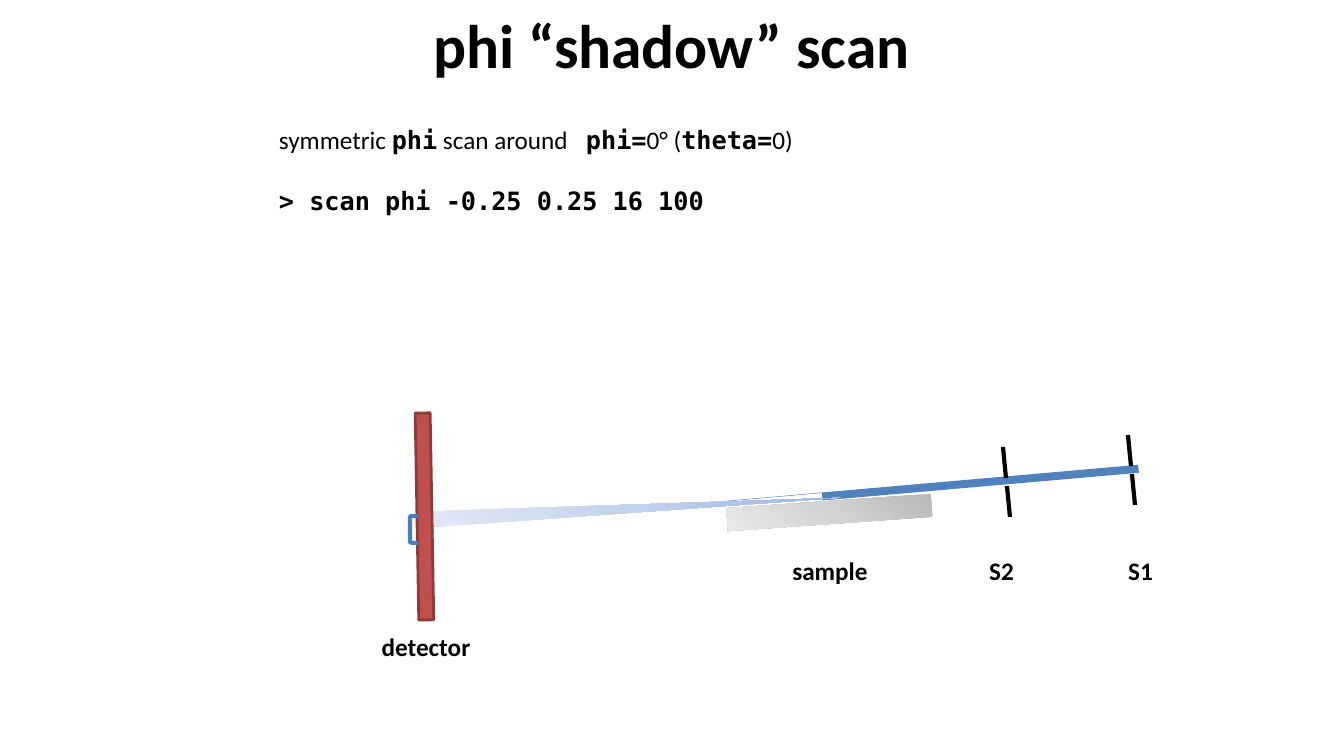
import pptx
import pptx.dml.color
import pptx.enum.shapes
import pptx.enum.text
import pptx.oxml
import pptx.oxml.ns
import pptx.util

SHAPE = pptx.enum.shapes.MSO_SHAPE
ALIGN = pptx.enum.text.PP_ALIGN
ANCHOR = pptx.enum.text.MSO_ANCHOR
FIT = pptx.enum.text.MSO_AUTO_SIZE
NS = pptx.oxml.ns.nsdecls("a")


def px(n):
    return pptx.util.Emu(round(n * 914400 / 100.8))


def rgb(value):
    return pptx.dml.color.RGBColor.from_string(value)


class Slide:
    BLACK = "000000"
    BLUE = "4F81BD"
    BODY = {"name": "Calibri", "size": pptx.util.Pt(18), "bold": False}
    BOLD = {**BODY, "bold": True}
    CODE = {**BOLD, "name": "DejaVu Sans Mono"}
    TITLE = {**BOLD, "size": pptx.util.Pt(44)}

    def __init__(self, prs):
        self.s = prs.slides.add_slide(prs.slide_layouts[6])

    def shape(self, kind, x, y, w, h, fill=None, line=None, rotation=0):
        sp = self.s.shapes.add_shape(kind, px(x), px(y), px(w), px(h))
        sp.shadow.inherit = False
        sp.rotation = rotation
        if fill:
            sp.fill.solid()
            sp.fill.fore_color.rgb = rgb(fill)
        else:
            sp.fill.background()
        if line:
            color, width = line
            sp.line.color.rgb = rgb(color)
            sp.line.width = pptx.util.Pt(width)
        else:
            sp.line.fill.background()
        return sp

    def gradient(self, sp, colors, direction):
        stops = "".join(
            f'<a:gs pos="{i * 50000}"><a:srgbClr val="{c}"/></a:gs>'
            for i, c in enumerate(colors)
        )
        xml = (f'<a:gradFill {NS} rotWithShape="1">'
               f"<a:gsLst>{stops}</a:gsLst>{direction}</a:gradFill>")
        pr = sp._element.spPr
        old = pr.find(pptx.oxml.ns.qn("a:noFill"))
        pr.replace(old, pptx.oxml.parse_xml(xml))

    def line(self, x1, y1, x2, y2):
        cn = self.s.shapes.add_connector(
            pptx.enum.shapes.MSO_CONNECTOR.STRAIGHT,
            px(x1), px(y1), px(x2), px(y2))
        cn.line.color.rgb = rgb(self.BLACK)
        cn.line.width = pptx.util.Pt(3)
        cn._element.spPr.append(pptx.oxml.parse_xml(f"<a:effectLst {NS}/>"))

    def slit(self, x, y):
        for dx, dy in ((0, 0), (4, 39)):
            self.line(x + dx, y + dy, x + dx + 3, y + dy + 31)

    def text(self, x, y, w, h, paragraphs, align=ALIGN.CENTER,
             anchor=ANCHOR.TOP, fit=FIT.SHAPE_TO_FIT_TEXT):
        sp = self.s.shapes.add_textbox(px(x), px(y), px(w), px(h))
        tf = sp.text_frame
        for key, value in {"word_wrap": True, "auto_size": fit,
                           "vertical_anchor": anchor}.items():
            setattr(tf, key, value)
        for i, runs in enumerate(paragraphs):
            p = tf.add_paragraph() if i else tf.paragraphs[0]
            p.alignment = align
            if i:
                p.space_before = pptx.util.Pt(22)
            for content, fmt in runs:
                r = p.add_run()
                r.text = content
                for key, value in fmt.items():
                    setattr(r.font, key, value)
                r.font.color.rgb = rgb(self.BLACK)
        return tf

    def label(self, x, y, w, content):
        self.text(x, y, w, 40, [[(content, self.BOLD)]])

    def instructions(self):
        body, code = self.BODY, self.CODE
        tf = self.text(168, 119, 1008, 102, [
            [("symmetric ", body), ("phi", code), (" scan around\t", body),
             ("phi=", code), ("0° (", body), ("theta=", code), ("0)", body)],
            [("> scan phi -0.25 0.25 16 100", code)],
        ], align=ALIGN.LEFT)
        tf.margin_left = px(111)
        tabs = f'<a:tabLst {NS}><a:tab pos="{px(307)}" algn="l"/></a:tabLst>'
        tf.paragraphs[0]._p.get_or_add_pPr().append(pptx.oxml.parse_xml(tabs))


def main():
    prs = pptx.Presentation()
    prs.slide_width = px(1344)
    prs.slide_height = px(756)
    s = Slide(prs)

    s.shape(SHAPE.RECTANGLE, 425, 496, 715, 8, s.BLUE, rotation=355)
    s.slit(1128, 435)
    s.slit(1003, 447)
    s.label(759, 550, 142, "sample")
    s.label(1105, 550, 71, "S1")
    s.label(966, 550, 71, "S2")
    s.text(168, 0, 1008, 87, [[("phi “shadow” scan", s.TITLE)]],
           anchor=ANCHOR.MIDDLE, fit=FIT.NONE)
    s.instructions()

    s.shape(SHAPE.RECTANGLE, 433, 510, 390, 12, "FFFFFF", rotation=355)
    sample = s.shape(SHAPE.RECTANGLE, 727, 501, 205, 23, rotation=356)
    s.gradient(sample, ("B8B8B8", "D3D3D3", "E9E9E9"),
               '<a:lin ang="8100000" scaled="0"/>')
    spread = s.shape(SHAPE.ISOSCELES_TRIANGLE, 628, 304, 16, 409, rotation=87)
    s.gradient(spread, ("9AB5E4", "C2D1ED", "E1E8F5"),
               '<a:path path="circle">'
               '<a:fillToRect l="100000" b="100000"/></a:path>')

    s.shape(SHAPE.RECTANGLE, 417, 413, 15, 207, "C0504D", ("8E3B39", 2), 359)
    s.shape(SHAPE.LEFT_BRACKET, 410, 516, 8, 27, line=("4B7EBC", 3))
    s.label(355, 626, 142, "detector")
    prs.save("out.pptx")


if __name__ == "__main__":
    main()
